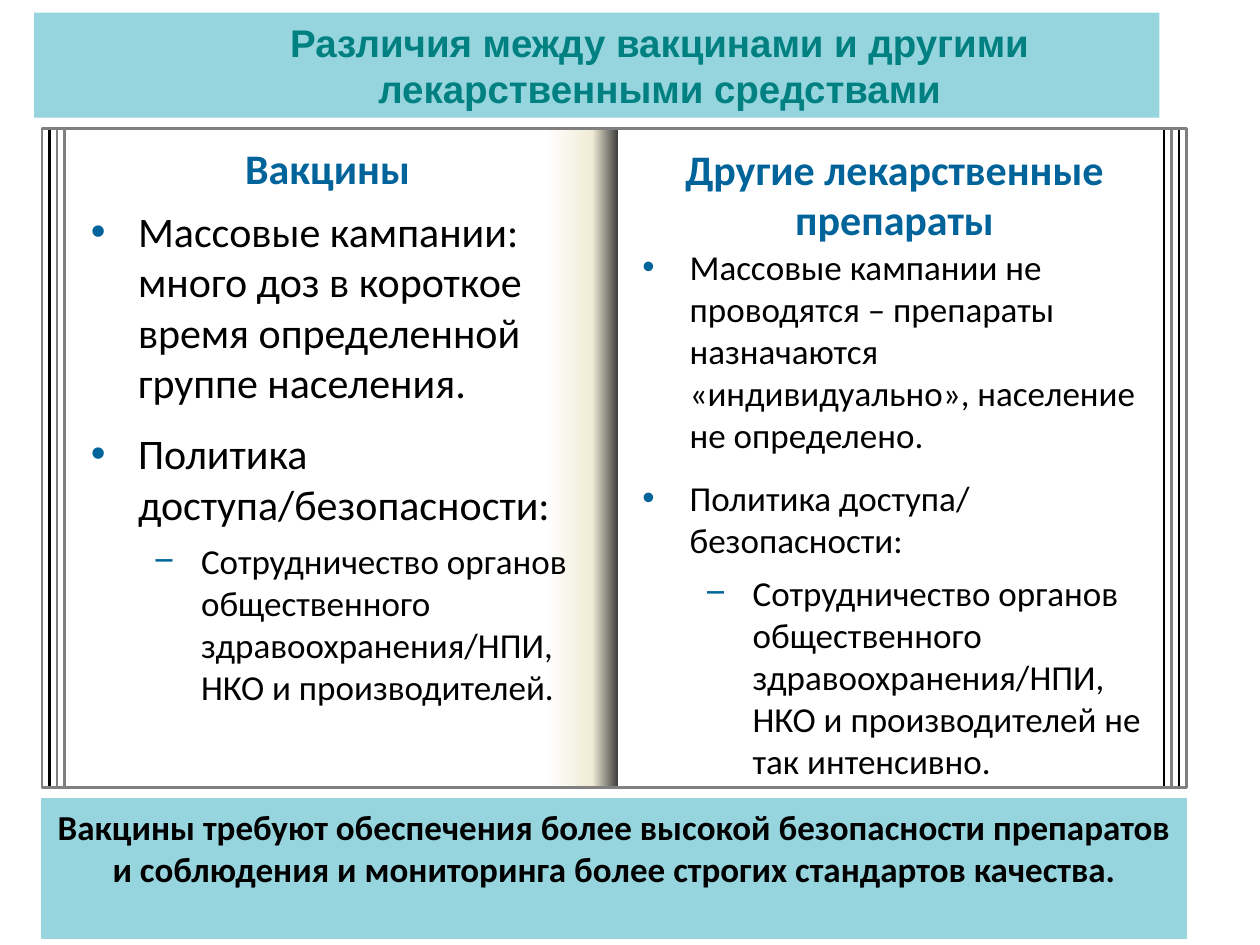
from copy import deepcopy
from lxml.etree import SubElement
from pptx import Presentation
from pptx.dml.color import RGBColor
from pptx.enum.shapes import MSO_CONNECTOR as Link, MSO_SHAPE as Kind
from pptx.enum.text import MSO_ANCHOR as Anchor, PP_ALIGN as Align
from pptx.oxml.ns import qn
from pptx.util import Pt

BLACK = RGBColor(0, 0, 0)
GREY = RGBColor(0x80, 0x80, 0x80)
BLUE = RGBColor(0x00, 0x63, 0x9A)
TEAL = RGBColor(0x00, 0x80, 0x80)
AQUA = RGBColor(0x96, 0xD5, 0xDE)
FOLD = [(0, RGBColor(255, 255, 255)), (0.65, RGBColor(0xF0, 0xEB, 0xD5)),
        (1, RGBColor(0x40, 0x40, 0x40))]
MARKS = {1: "•", 2: "−"}

LEFT = [(1, "Массовые кампании: много доз в короткое время определенной группе населения.", 24),
        (1, "Политика доступа/безопасности:", 24),
        (2, "Сотрудничество органов общественного здравоохранения/НПИ, "
            "НКО и производителей.", 20)]
RIGHT = [(1, "Массовые кампании не проводятся – препараты назначаются "
             "«индивидуально», население не определено.", 20),
         (1, "Политика доступа/ безопасности:", 20),
         (2, "Сотрудничество органов общественного здравоохранения/НПИ, "
             "НКО и производителей не так интенсивно.", 20)]


def write(para, text, size=20, color=BLACK, bold=False, font="Calibri",
          align=Align.LEFT, before=0, after=0):
    para.alignment = align
    para.space_before, para.space_after = Pt(before), Pt(after)
    run = para.add_run()
    run.text = text
    run.font.name, run.font.size, run.font.bold = font, Pt(size), bold
    run.font.color.rgb = color


def indent(para, left, hang=0):
    props = para._p.get_or_add_pPr()
    props.set("marL", str(Pt(left)))
    props.set("indent", str(Pt(-hang)))
    return props


def mark(para, level):
    """Give the paragraph a hanging blue bullet for its level."""
    para.level = level
    props = indent(para, 36 * level - 9, 27)
    color = SubElement(props, qn("a:buClr"))
    SubElement(color, qn("a:srgbClr"), val=str(BLUE))
    SubElement(props, qn("a:buFont"), typeface="Arial")
    SubElement(props, qn("a:buChar"), char=MARKS[level])


def rect(slide, x, y, w, h, fill=None, line=None, weight=0.75):
    shape = slide.shapes.add_shape(Kind.RECTANGLE, Pt(x), Pt(y), Pt(w), Pt(h))
    shape.shadow.inherit = False
    if fill is None:
        shape.fill.background()
    else:
        shape.fill.solid()
        shape.fill.fore_color.rgb = fill
    if line is None:
        shape.line.fill.background()
    else:
        shape.line.color.rgb = line
        shape.line.width = Pt(weight)
    shape.text_frame.word_wrap = True
    return shape


def rule(slide, x, y, h, color, weight=1.5):
    line = slide.shapes.add_connector(Link.STRAIGHT, Pt(x), Pt(y), Pt(x), Pt(y + h))
    line.line.color.rgb = color
    line.line.width = Pt(weight)
    SubElement(line._element.spPr, qn("a:effectLst"))


def fold(slide, x, y, w, h):
    """Shade the page towards the spine of the book."""
    shape = rect(slide, x, y, w, h)
    shape.fill.gradient()
    shape.fill.gradient_angle = 0
    stops = shape._element.spPr.find(".//" + qn("a:gsLst"))
    stops.append(deepcopy(stops[0]))
    for stop, (place, color) in zip(shape.fill.gradient_stops, FOLD):
        stop.position = place
        stop.color.rgb = color


def book(slide, x, y, w, h):
    rule(slide, x + 327.5, y, h, BLACK, 0.75)
    fold(slide, x + 288, y, 41, h)
    edges = zip((BLACK, GREY, GREY), (BLACK, GREY, BLACK))
    for i, (near, far) in enumerate(edges, 1):
        rule(slide, x + 4.3 * i, y - 1, h, near)
        rule(slide, x + w - 4.3 * i, y, h, far)
    rect(slide, x, y, w, h, line=GREY, weight=1.5)


def text_box(slide, x, y, w, h):
    frame = slide.shapes.add_textbox(Pt(x), Pt(y), Pt(w), Pt(h)).text_frame
    frame.word_wrap = True
    return frame


def heading(slide, x, y, w, h, text):
    frame = text_box(slide, x, y, w, h)
    write(frame.paragraphs[0], text, size=24, color=BLUE, bold=True, align=Align.CENTER)


def points(slide, x, y, w, h, items):
    frame = text_box(slide, x, y, w, h)
    for i, (level, text, size) in enumerate(items):
        para = frame.add_paragraph() if i else frame.paragraphs[0]
        write(para, text, size=size, before=6 if i == 1 else 0, after=6)
        mark(para, level)


def summary(slide, x, y, w, h, text):
    frame = rect(slide, x, y, w, h, fill=AQUA, line=AQUA).text_frame
    frame.vertical_anchor = Anchor.TOP
    write(frame.paragraphs[0], text, bold=True, align=Align.CENTER)


def title(slide, x, y, w, h, text):
    frame = rect(slide, x, y, w, h, fill=AQUA).text_frame
    frame.vertical_anchor = Anchor.MIDDLE
    para = frame.paragraphs[0]
    write(para, text, size=22, color=TEAL, bold=True, font="Arial",
          align=Align.CENTER, after=6)
    para.level = 2
    indent(para, 72)


def main():
    deck = Presentation()
    deck.slide_width, deck.slide_height = Pt(720), Pt(540)
    slide = deck.slides.add_slide(deck.slide_layouts[6])
    book(slide, 24, 73.5, 654, 376.5)
    heading(slide, 36, 78, 302.4, 36, "Вакцины")
    heading(slide, 360, 78.5, 302.4, 65.5, "Другие лекарственные препараты")
    points(slide, 44.8, 113.8, 306, 330, LEFT)
    points(slide, 360, 136.8, 302.4, 343.4, RIGHT)
    summary(slide, 24, 456.5, 654, 80,
            "Вакцины требуют обеспечения более высокой безопасности препаратов "
            "и соблюдения и мониторинга более строгих стандартов качества.")
    title(slide, 19.5, 7.2, 643, 60,
          "Различия между вакцинами и другими лекарственными средствами")
    deck.save("out.pptx")


if __name__ == "__main__":
    main()
